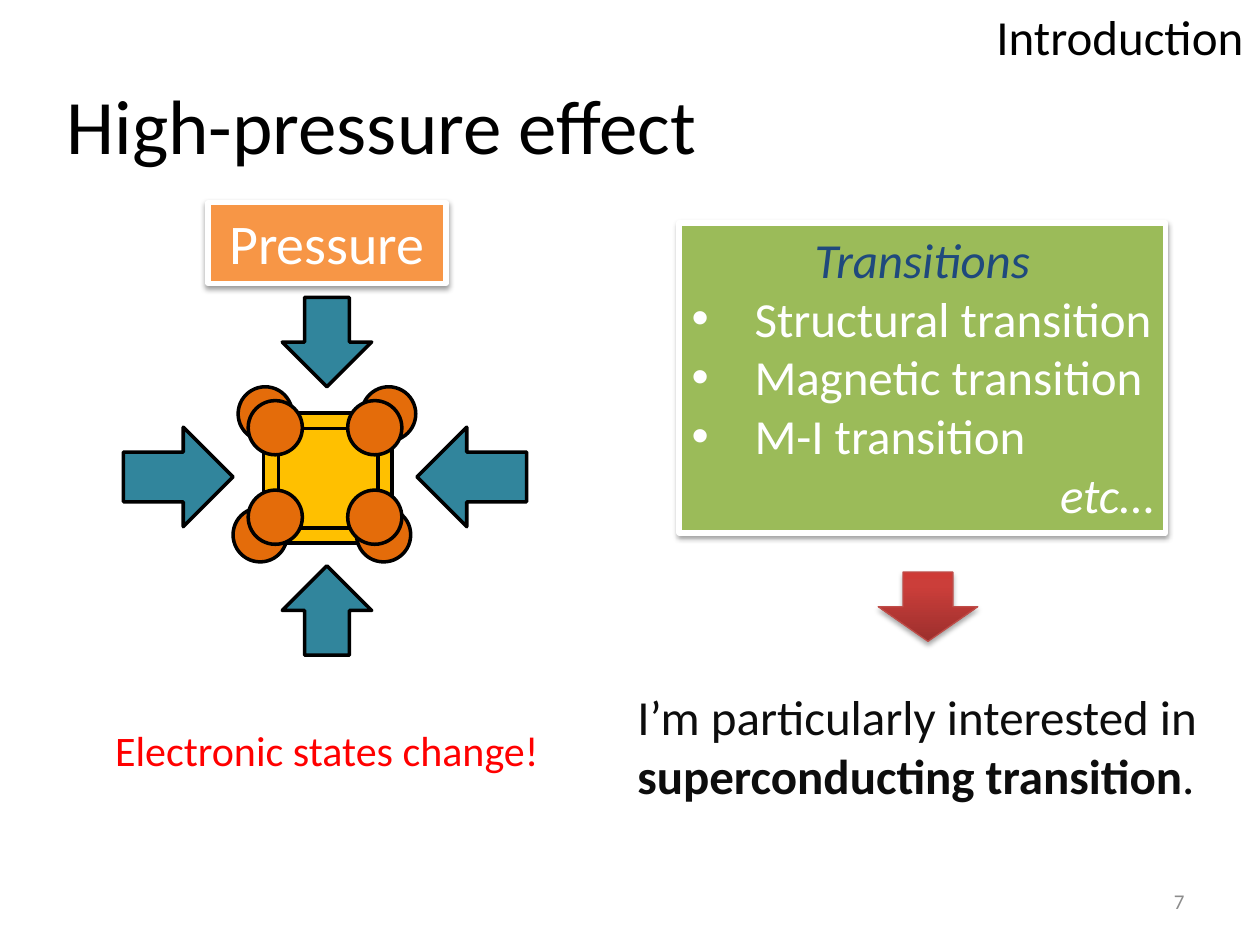
from copy import deepcopy
from dataclasses import dataclass
from typing import Optional

from lxml.etree import SubElement
from pptx import Presentation
from pptx.dml.color import RGBColor
from pptx.enum.shapes import MSO_SHAPE
from pptx.enum.text import MSO_ANCHOR, PP_ALIGN
from pptx.oxml.ns import qn
from pptx.util import Inches, Pt

FONT = "Calibri"
BLACK = RGBColor(0x00, 0x00, 0x00)
WHITE = RGBColor(0xFF, 0xFF, 0xFF)
RED = RGBColor(0xFF, 0x00, 0x00)
GRAY = RGBColor(0x8C, 0x8C, 0x8C)
INK = RGBColor(0x0D, 0x0D, 0x0D)
NAVY = RGBColor(0x1F, 0x49, 0x7D)
ORANGE = RGBColor(0xF7, 0x96, 0x46)
GREEN = RGBColor(0x9B, 0xBB, 0x59)
TEAL = RGBColor(0x31, 0x85, 0x9C)
GOLD = RGBColor(0xFF, 0xC0, 0x00)
ATOM = RGBColor(0xE4, 0x6C, 0x0A)
ARROW_EDGE = RGBColor(0xBF, 0x4C, 0x48)
ARROW_STOPS = (
    (0, RGBColor(0x9C, 0x2F, 0x2D)),
    (0.8, RGBColor(0xCB, 0x3E, 0x3A)),
    (1, RGBColor(0xCE, 0x3B, 0x37)),
)
ATOM_SIZE = 0.43


@dataclass(frozen=True)
class Box:
    left: float
    top: float
    width: float
    height: float

    def lengths(self) -> tuple:
        return tuple(Inches(v) for v in (self.left, self.top, self.width, self.height))


@dataclass(frozen=True)
class Span:
    text: str
    bold: bool = False
    italic: bool = False
    color: Optional[RGBColor] = None


@dataclass(frozen=True)
class Para:
    spans: tuple
    align: PP_ALIGN = PP_ALIGN.LEFT
    bullet: bool = False


@dataclass(frozen=True)
class Label:
    box: Box
    paras: tuple
    size: int
    color: RGBColor
    anchor: MSO_ANCHOR = MSO_ANCHOR.TOP
    wrap: bool = True


@dataclass(frozen=True)
class Lattice:
    cell: Box
    atoms: tuple


def line(text: str, align: PP_ALIGN = PP_ALIGN.LEFT, bullet: bool = False) -> Para:
    """Return a paragraph of one plain span."""
    return Para((Span(text),), align, bullet)


def add_bullet(para) -> None:
    """Give a paragraph a hanging round bullet."""
    properties = para._p.get_or_add_pPr()
    properties.set("marL", str(Inches(0.5)))
    properties.set("indent", str(-Inches(0.5)))
    SubElement(properties, qn("a:buFont"), typeface="Arial")
    SubElement(properties, qn("a:buChar"), char="•")


def write(frame, label: Label) -> None:
    """Fill a text frame with the paragraphs of a label."""
    frame.word_wrap = label.wrap
    frame.vertical_anchor = label.anchor
    for index, content in enumerate(label.paras):
        para = frame.add_paragraph() if index else frame.paragraphs[0]
        para.alignment = content.align
        if content.bullet:
            add_bullet(para)
        for span in content.spans:
            run = para.add_run()
            run.text = span.text
            run.font.name = FONT
            run.font.size = Pt(label.size)
            run.font.bold = span.bold
            run.font.italic = span.italic
            run.font.color.rgb = span.color or label.color


def draw_text(page, label: Label) -> None:
    """Add a text box."""
    write(page.shapes.add_textbox(*label.box.lengths()).text_frame, label)


def draw_shape(shapes, kind: MSO_SHAPE, box: Box, fill: RGBColor,
               edge: RGBColor = BLACK, weight: float = 2):
    """Add a filled, outlined preset shape without a shadow."""
    shape = shapes.add_shape(kind, *box.lengths())
    shape.shadow.inherit = False
    shape.fill.solid()
    shape.fill.fore_color.rgb = fill
    shape.line.color.rgb = edge
    shape.line.width = Pt(weight)
    return shape


def cast_shadow(shape, distance: float, opacity: int) -> None:
    """Give a shape a soft black shadow below it."""
    effects = shape._element.spPr.find(qn("a:effectLst"))
    shadow = SubElement(effects, qn("a:outerShdw"), blurRad=str(Pt(3.1)),
                        dist=str(Pt(distance)), dir="5400000", rotWithShape="0")
    color = SubElement(shadow, qn("a:srgbClr"), val=str(BLACK))
    SubElement(color, qn("a:alpha"), val=str(opacity * 1000))


def draw_panel(page, label: Label, fill: RGBColor) -> None:
    """Add a white-framed text panel with a shadow."""
    panel = draw_shape(page.shapes, MSO_SHAPE.RECTANGLE, label.box, fill, WHITE, 3)
    cast_shadow(panel, 1.6, 38)
    write(panel.text_frame, label)


def draw_lattice(page, lattice: Lattice) -> None:
    """Add a grouped unit cell with an atom at each corner."""
    group = page.shapes.add_group_shape()
    draw_shape(group.shapes, MSO_SHAPE.RECTANGLE, lattice.cell, GOLD)
    for left, top in lattice.atoms:
        draw_shape(group.shapes, MSO_SHAPE.OVAL, Box(left, top, ATOM_SIZE, ATOM_SIZE), ATOM)


def draw_result_arrow(page, box: Box) -> None:
    """Add the red gradient arrow under the transitions panel."""
    arrow = draw_shape(page.shapes, MSO_SHAPE.DOWN_ARROW, box, RED, ARROW_EDGE, 0.75)
    arrow.fill.gradient()
    arrow.fill.gradient_angle = 90
    stop_list = arrow._element.spPr.find(".//" + qn("a:gsLst"))
    stop_list.append(deepcopy(stop_list[-1]))
    for stop, (position, color) in zip(arrow.fill.gradient_stops, ARROW_STOPS):
        stop.position = position
        stop.color.rgb = color
    cast_shadow(arrow, 1.8, 35)


PRESSURE = Label(Box(1.65, 1.61, 1.89, 0.64), (line("Pressure", PP_ALIGN.CENTER),), 32, WHITE)
TRANSITIONS = Label(Box(5.39, 1.77, 3.86, 2.46), (
    Para((Span("Transitions", italic=True, color=NAVY),), PP_ALIGN.CENTER),
    *(line(f"{name} transition", bullet=True) for name in ("Structural", "Magnetic", "M-I")),
    Para((Span("etc", italic=True), Span("…")), PP_ALIGN.RIGHT),
), 28, WHITE)
TEXTS = (
    Label(Box(0.43, 0.36, 9, 1.25), (line("High-pressure effect"),), 44, BLACK, MSO_ANCHOR.MIDDLE),
    Label(Box(0.51, 5.7, 4.17, 0.5), (line("Electronic states change!", PP_ALIGN.CENTER),), 24, RED),
    Label(Box(4.96, 5.4, 5, 1.04), (
        line("I’m particularly interested in"),
        Para((Span("superconducting transition", bold=True), Span("."))),
    ), 28, INK),
    Label(Box(7.81, 0, 2.19, 0.57), (line("Introduction"),), 28, BLACK, wrap=False),
    Label(Box(7.17, 6.95, 2.33, 0.4), (line("7", PP_ALIGN.RIGHT),), 12, GRAY, MSO_ANCHOR.MIDDLE),
)
PRESSURE_ARROWS = (
    (MSO_SHAPE.DOWN_ARROW, Box(2.24, 2.36, 0.71, 0.71)),
    (MSO_SHAPE.UP_ARROW, Box(2.24, 4.49, 0.71, 0.71)),
    (MSO_SHAPE.RIGHT_ARROW, Box(0.98, 3.39, 0.87, 0.79)),
    (MSO_SHAPE.LEFT_ARROW, Box(3.31, 3.39, 0.87, 0.79)),
)
LATTICES = (
    Lattice(Box(2.09, 3.28, 1.02, 1.03), ((1.89, 3.07), (2.87, 3.07), (1.85, 4.03), (2.83, 4.03))),
    Lattice(Box(2.21, 3.4, 0.79, 0.79), tuple((x, y) for y in (3.18, 3.89) for x in (1.97, 2.76))),
)


def main() -> None:
    """Build the high-pressure slide and save it."""
    deck = Presentation()
    deck.slide_width, deck.slide_height = Inches(10), Inches(7.5)
    page = deck.slides.add_slide(deck.slide_layouts[6])
    draw_panel(page, PRESSURE, ORANGE)
    for kind, box in PRESSURE_ARROWS:
        draw_shape(page.shapes, kind, box, TEAL)
    for lattice in LATTICES:
        draw_lattice(page, lattice)
    draw_panel(page, TRANSITIONS, GREEN)
    draw_result_arrow(page, Box(6.97, 4.54, 0.79, 0.55))
    for label in TEXTS:
        draw_text(page, label)
    deck.save("out.pptx")


if __name__ == "__main__":
    main()
